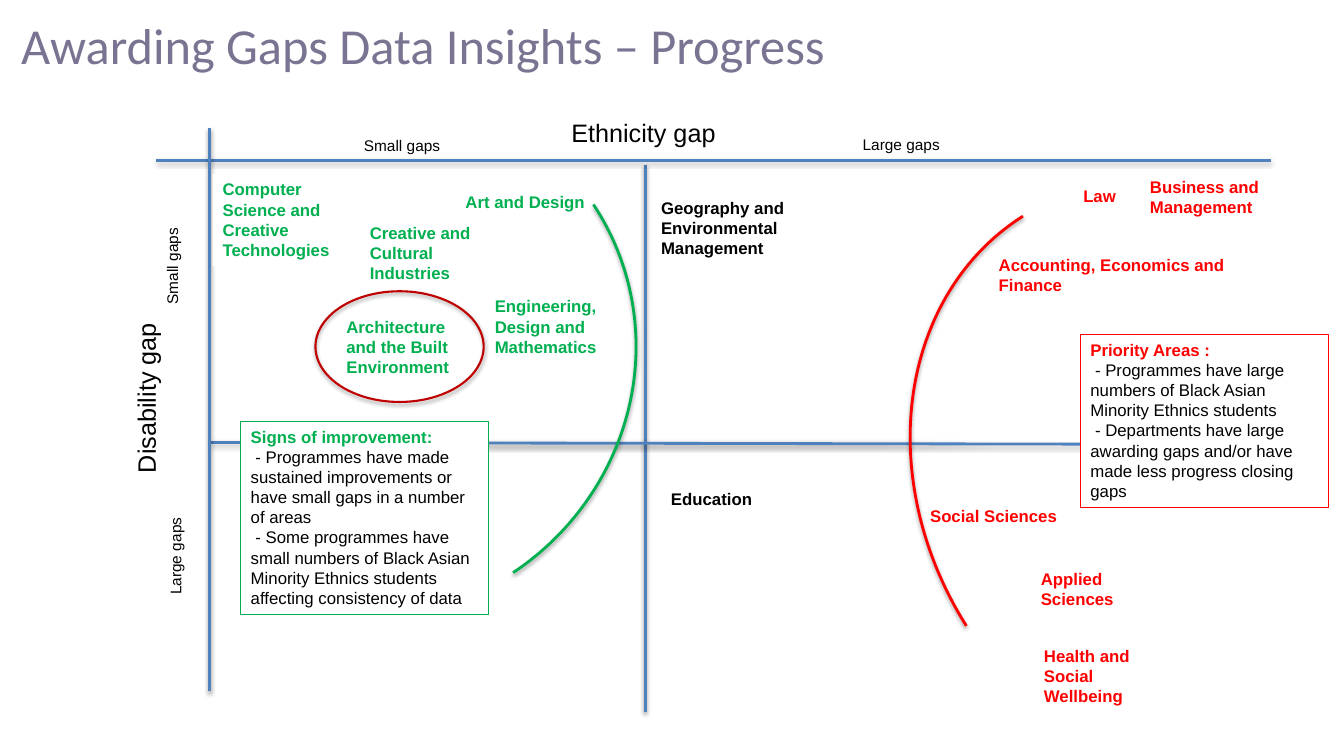
from pptx import Presentation
from pptx.dml.color import RGBColor
from pptx.enum.shapes import MSO_CONNECTOR, MSO_SHAPE
from pptx.enum.text import MSO_ANCHOR, MSO_AUTO_SIZE, PP_ALIGN
from pptx.oxml import parse_xml
from pptx.oxml.ns import nsdecls
from pptx.util import Cm, Pt

GREEN = RGBColor(0x00, 0xB0, 0x50)
RED = RGBColor(0xFF, 0x00, 0x00)
DARK_RED = RGBColor(0xC0, 0x00, 0x00)
BLUE = RGBColor(0x4F, 0x81, 0xBD)
MAUVE = RGBColor(0x7A, 0x73, 0x92)
BLACK = RGBColor(0x00, 0x00, 0x00)
WHITE = RGBColor(0xFF, 0xFF, 0xFF)

# Content; lengths in centimetres
TITLE = "Awarding Gaps Data Insights – Progress"

# start x, start y, end x, end y
GRID_LINES = [
    (16.26, 4.17, 16.26, 17.93),
    (3.94, 4.04, 32.03, 4.04),
    (5.31, 11.15, 31.34, 11.2),
    (5.28, 3.23, 5.28, 17.42),
]

# text, left, top, width, height, size, rotation
AXIS_LABELS = [
    ("Ethnicity gap", 14.15, 2.82, 4.19, 1.02, 18, 0),
    ("Disability gap", 1.52, 9.5, 4.32, 1.02, 18, 270),
    ("Small gaps", 8.92, 3.3, 2.46, 0.74, 11, 0),
    ("Small gaps", 3.12, 6.32, 2.46, 0.74, 11, 270),
    ("Large gaps", 3.2, 13.64, 2.46, 0.74, 11, 270),
    ("Large gaps", 21.49, 3.28, 2.46, 0.74, 11, 0),
]

# text, colour, left, top, width, number of lines
SUBJECTS = [
    ("Creative and Cultural Industries", GREEN, 9.07, 5.49, 3.78, 3),
    ("Accounting, Economics and Finance", RED, 24.92, 6.3, 6.45, 2),
    ("Law", RED, 27.05, 4.55, 1.65, 1),
    ("Business and Management", RED, 28.73, 4.32, 3.3, 2),
    ("Computer Science and Creative Technologies", GREEN, 5.36, 4.39, 3.3, 4),
    ("Architecture and the Built Environment", GREEN, 8.48, 7.85, 3.3, 3),
    ("Geography and Environmental Management", BLACK, 16.41, 4.85, 3.99, 3),
    ("Applied Sciences", RED, 25.98, 14.2, 3.78, 2),
    ("Social Sciences", RED, 23.19, 12.62, 3.78, 1),
    ("Health and Social Wellbeing", RED, 26.06, 16.15, 3.78, 3),
    ("Art and Design", GREEN, 11.48, 4.7, 3.78, 1),
    ("Engineering, Design and Mathematics", GREEN, 12.22, 7.34, 3.3, 3),
    ("Education", BLACK, 16.66, 12.19, 3.78, 1),
]

# heading, points, colour, left, top, width, number of lines
NOTES = [
    ("Priority Areas :",
     [" - Programmes have large numbers of Black Asian Minority Ethnics students",
      " - Departments have large awarding gaps and/or have made less progress closing gaps"],
     RED, 27.23, 8.43, 6.25, 8),
    ("Signs of improvement:",
     [" - Programmes have made sustained improvements or have small gaps in a number of areas",
      " - Some programmes have small numbers of Black Asian Minority Ethnics students "
      "affecting consistency of data"],
     GREEN, 6.07, 10.62, 6.25, 9),
]

# shape, colour, line width, left, top, width, height, rotation
CURVES = [
    (MSO_SHAPE.ARC, GREEN, 2, 2.67, 2.11, 13.21, 13.64, 56.4),
    (MSO_SHAPE.ARC, RED, 2, 22.07, 5.46, 15.93, 13.44, 237.7),
    (MSO_SHAPE.OVAL, DARK_RED, 1.5, 7.95, 7.34, 4.24, 2.79, 0),
]

LINE_PITCH = 0.51
BOX_PADDING = 0.28


def add_span(para, text, size, color, bold=False, font="Arial"):
    span = para.add_run()
    span.text = text
    span.font.name = font
    span.font.size = Pt(size)
    span.font.bold = bold
    span.font.color.rgb = color


def add_filled_box(page, left, top, width, lines):
    height = BOX_PADDING + LINE_PITCH * lines
    box = page.shapes.add_textbox(Cm(left), Cm(top), Cm(width), Cm(height))
    box.fill.solid()
    box.fill.fore_color.rgb = WHITE
    box.text_frame.word_wrap = True
    return box


def style_outline(shape, color, width):
    """Set the line, then append a soft downward shadow."""
    shape.line.color.rgb = color
    shape.line.width = Pt(width)
    shape._element.spPr.append(parse_xml(
        f'<a:effectLst {nsdecls("a")}>'
        f'<a:outerShdw blurRad="{Pt(3.1)}" dist="{Pt(1.6)}" dir="5400000" rotWithShape="0">'
        '<a:srgbClr val="000000"><a:alpha val="38000"/></a:srgbClr>'
        '</a:outerShdw></a:effectLst>'))


def main():
    deck = Presentation()
    deck.slide_width, deck.slide_height = Cm(33.87), Cm(19.05)
    page = deck.slides.add_slide(deck.slide_layouts[5])

    # Title
    title = page.shapes.title
    title.left, title.top, title.width, title.height = Cm(0.53), Cm(0.36), Cm(27.61), Cm(2.82)
    frame = title.text_frame
    frame.margin_left = frame.margin_right = frame.margin_top = frame.margin_bottom = 0
    frame.vertical_anchor = MSO_ANCHOR.TOP
    frame.paragraphs[0].alignment = PP_ALIGN.LEFT
    add_span(frame.paragraphs[0], TITLE, 36, MAUVE, font="Calibri")

    # Quadrant lines
    for ends in GRID_LINES:
        line = page.shapes.add_connector(MSO_CONNECTOR.STRAIGHT, *map(Cm, ends))
        style_outline(line, BLUE, 2)

    # Axis labels
    for text, left, top, width, height, size, rotation in AXIS_LABELS:
        box = page.shapes.add_textbox(Cm(left), Cm(top), Cm(width), Cm(height))
        box.rotation = rotation
        box.text_frame.word_wrap = False
        box.text_frame.auto_size = MSO_AUTO_SIZE.SHAPE_TO_FIT_TEXT
        add_span(box.text_frame.paragraphs[0], text, size, BLACK)

    # Subject areas
    for text, color, left, top, width, lines in SUBJECTS:
        box = add_filled_box(page, left, top, width, lines)
        add_span(box.text_frame.paragraphs[0], text, 12, color, bold=True)

    # Outlined notes
    for heading, points, color, left, top, width, lines in NOTES:
        box = add_filled_box(page, left, top, width, lines)
        box.line.color.rgb = color
        box.line.width = Pt(0.75)
        add_span(box.text_frame.paragraphs[0], heading, 12, color, bold=True)
        for point in points:
            add_span(box.text_frame.add_paragraph(), point, 12, BLACK)

    # Grouping arcs and highlight ring
    for kind, color, weight, left, top, width, height, rotation in CURVES:
        curve = page.shapes.add_shape(kind, Cm(left), Cm(top), Cm(width), Cm(height))
        curve.rotation = rotation
        curve.fill.background()
        style_outline(curve, color, weight)

    deck.save("out.pptx")


if __name__ == "__main__":
    main()
